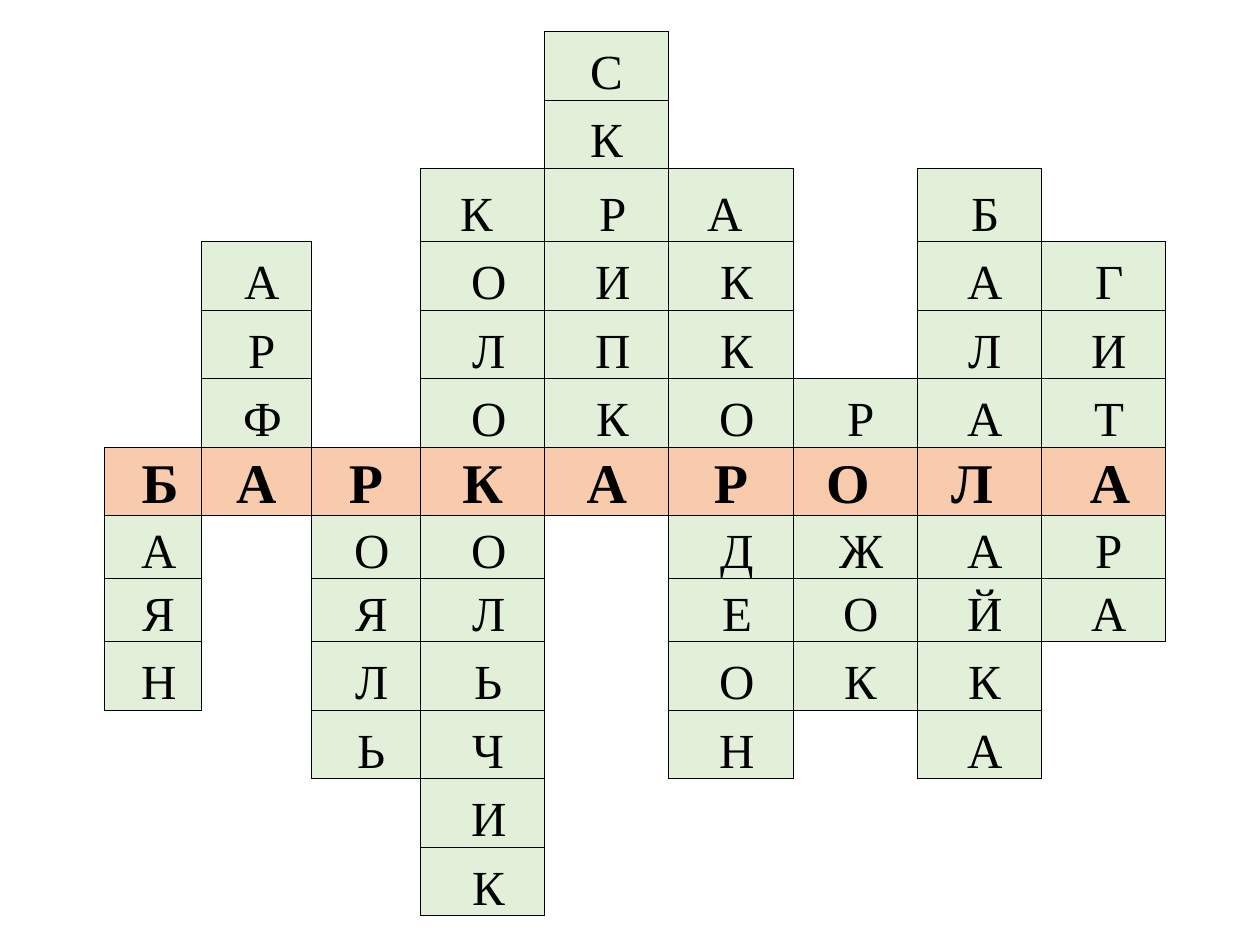
"""Build the crossword slide whose key word is БАРКАРОЛА."""
from lxml import etree
from pptx import Presentation
from pptx.dml.color import RGBColor
from pptx.enum.text import MSO_ANCHOR, PP_ALIGN
from pptx.oxml.ns import qn
from pptx.util import Inches, Pt

BOTTOM = MSO_ANCHOR.BOTTOM
CENTER = PP_ALIGN.CENTER
BLACK = RGBColor(0x00, 0x00, 0x00)
GREEN = RGBColor(0xE2, 0xF0, 0xD9)
ORANGE = RGBColor(0xF8, 0xCB, 0xAD)
NBSP = " "
EMPTY = "."

GRID = [
    "....С....",
    "....К....",
    "...КРА.Б.",
    ".А.ОИК.АГ",
    ".Р.ЛПК.ЛИ",
    ".Ф.ОКОРАТ",
    "БАРКАРОЛА",
    "А.ОО.ДЖАР",
    "Я.ЯЛ.ЕОЙА",
    "Н.ЛЬ.ОКК.",
    "..ЬЧ.Н.А.",
    "...И.....",
    "...К.....",
]
KEY_ROW = 6
UNPADDED = {(0, 4), (1, 4)} | {(KEY_ROW, column) for column in range(1, 6)}
PADDED_AFTER = {(2, 3), (2, 5), (KEY_ROW, 6), (KEY_ROW, 7)}
MERGES = [((0, 1), (1, 3)), ((0, 5), (1, 8))]

LEFT, TOP, WIDTH, HEIGHT = 0.83, 0.25, 8.42, 7.02
FIXED_COLUMNS = {0: 0.77, 1: 0.87, 2: 0.87}
FIXED_ROWS = {2: 0.58, 7: 0.5, 8: 0.5}


def share(total, count, fixed):
    rest = (total - sum(fixed.values())) / (count - len(fixed))
    return [fixed.get(index, rest) for index in range(count)]


def is_filled(row, column):
    inside = 0 <= row < len(GRID) and 0 <= column < len(GRID[0])
    return inside and GRID[row][column] != EMPTY


def padded_letter(row, column):
    letter = GRID[row][column]
    if (row, column) in UNPADDED:
        return letter
    if (row, column) in PADDED_AFTER:
        return letter + NBSP
    return NBSP + letter


class CrosswordSlide:
    """Hold the crossword style and the current slide."""

    font_name = "Times New Roman"
    letter_size = Pt(28)
    key_size = Pt(32)
    border_width = Pt(0.5)
    margin = Inches(0.01)

    def __init__(self, presentation):
        self.slide = presentation.slides.add_slide(presentation.slide_layouts[6])

    def add_crossword(self):
        widths = share(WIDTH, len(GRID[0]), FIXED_COLUMNS)
        heights = share(HEIGHT, len(GRID), FIXED_ROWS)
        table = self.slide.shapes.add_table(
            len(heights), len(widths),
            Inches(LEFT), Inches(TOP), Inches(WIDTH), Inches(HEIGHT),
        ).table
        table.first_row = False
        table.horz_banding = False
        for column, width in zip(table.columns, widths):
            column.width = Inches(width)
        for row, height in zip(table.rows, heights):
            row.height = Inches(height)
        for first, last in MERGES:
            table.cell(*first).merge(table.cell(*last))
        for row in range(len(heights)):
            for column in range(len(widths)):
                cell = table.cell(row, column)
                self.draw_borders(cell, row, column)
                if is_filled(row, column):
                    self.write_letter(cell, row, column)
                else:
                    cell.fill.background()

    def write_letter(self, cell, row, column):
        is_key = row == KEY_ROW
        cell.fill.solid()
        cell.fill.fore_color.rgb = ORANGE if is_key else GREEN
        cell.vertical_anchor = BOTTOM
        cell.margin_left = cell.margin_right = cell.margin_top = self.margin
        cell.margin_bottom = 0
        paragraph = cell.text_frame.paragraphs[0]
        paragraph.alignment = CENTER
        run = paragraph.add_run()
        run.text = padded_letter(row, column)
        run.font.name = self.font_name
        run.font.size = self.key_size if is_key else self.letter_size
        run.font.bold = is_key
        run.font.color.rgb = BLACK

    def draw_borders(self, cell, row, column):
        neighbours = {
            "a:lnL": (row, column - 1),
            "a:lnR": (row, column + cell.span_width),
            "a:lnT": (row - 1, column),
            "a:lnB": (row + cell.span_height, column),
        }
        properties = cell._tc.get_or_add_tcPr()
        for tag, neighbour in neighbours.items():
            line = etree.SubElement(properties, qn(tag), w=str(self.border_width))
            if is_filled(row, column) or is_filled(*neighbour):
                fill = etree.SubElement(line, qn("a:solidFill"))
                etree.SubElement(fill, qn("a:srgbClr"), val=str(BLACK))
            else:
                etree.SubElement(line, qn("a:noFill"))


def main():
    presentation = Presentation()
    presentation.slide_width = Inches(10)
    presentation.slide_height = Inches(7.5)
    CrosswordSlide(presentation).add_crossword()
    presentation.save("out.pptx")


if __name__ == "__main__":
    main()
